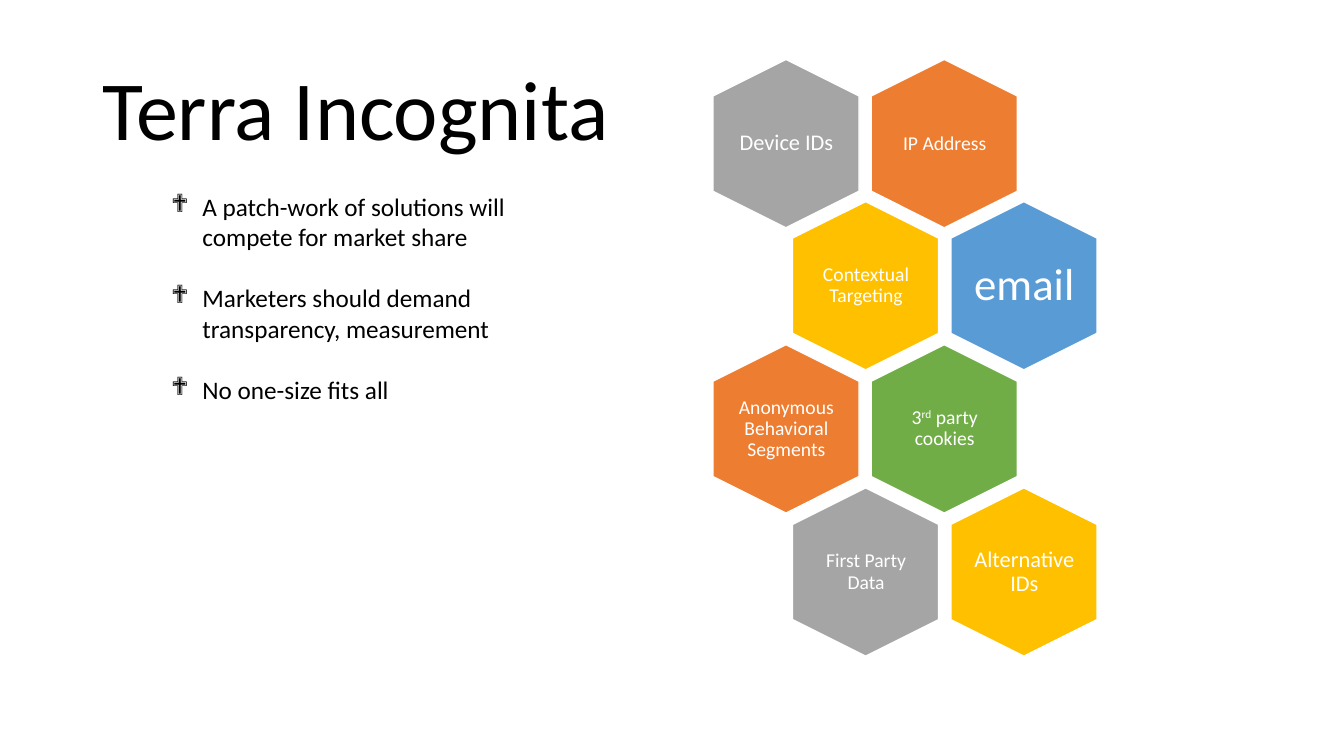
from lxml.etree import SubElement
from pptx import Presentation
from pptx.dml.color import RGBColor
from pptx.enum.shapes import MSO_SHAPE
from pptx.enum.text import MSO_ANCHOR, PP_ALIGN
from pptx.oxml.ns import qn
from pptx.util import Emu, Pt

EMU_PER_PX = 9144  # 100 px to the inch
WHITE, BLACK = "FFFFFF", "000000"
GREY, ORANGE, GOLD, BLUE, GREEN = "A5A5A5", "ED7D31", "FFC000", "599BD5", "70AD47"


def px(length):
    return Emu(length * EMU_PER_PX)


def color(hex_string):
    return RGBColor.from_string(hex_string)


class SlideBuilder:
    def __init__(self, slide, font="Calibri"):
        self.slide = slide
        self.font = font

    def run(self, paragraph, text, size, hex_color, superscript=False):
        run = paragraph.add_run()
        run.text = text
        run.font.name = self.font
        run.font.size = Pt(size)
        run.font.color.rgb = color(hex_color)
        if superscript:
            run.font._element.set("baseline", "30000")

    def text_frame(self, left, top, width, height, inset=(10, 5), anchor=MSO_ANCHOR.MIDDLE):
        box = self.slide.shapes.add_textbox(px(left), px(top), px(width), px(height))
        frame = box.text_frame
        frame.word_wrap = True
        frame.vertical_anchor = anchor
        frame.margin_left = frame.margin_right = px(inset[0])
        frame.margin_top = frame.margin_bottom = px(inset[1])
        return frame

    def title(self, text, left, top, width, height):
        paragraph = self.text_frame(left, top, width, height).paragraphs[0]
        paragraph.line_spacing = 0.9
        self.run(paragraph, text, 60, BLACK)

    def bullets(self, items, left, top, width, height):
        frame = self.text_frame(left, top, width, height, anchor=MSO_ANCHOR.TOP)
        for index, item in enumerate(items):
            paragraph = frame.add_paragraph() if index else frame.paragraphs[0]
            if index:
                paragraph.space_before = Pt(22)
            properties = paragraph._p.get_or_add_pPr()
            properties.set("marL", str(px(31)))
            properties.set("indent", str(-px(31)))
            SubElement(properties, qn("a:buFont"), typeface="Wingdings")
            SubElement(properties, qn("a:buChar"), char="❖")
            self.run(paragraph, item, 18, BLACK)

    def hexagon(self, left, top, fill, size, parts):
        """Draw an upright hexagon; every second part of its label is superscript."""
        shape = self.slide.shapes.add_shape(
            MSO_SHAPE.HEXAGON, px(left), px(top), px(167), px(145))
        shape.rotation = 90
        shape.adjustments[0] = 0.25
        shape.adjustments[1] = 1.1547
        shape.shadow.inherit = False
        shape.fill.solid()
        shape.fill.fore_color.rgb = color(fill)
        shape.line.color.rgb = color(WHITE)
        shape.line.width = Pt(1)

        frame = self.text_frame(left + 34, top + 15, 100, 115, inset=(0, 0))
        paragraph = frame.paragraphs[0]
        paragraph.alignment = PP_ALIGN.CENTER
        paragraph.line_spacing = 0.9
        for index, part in enumerate(parts):
            self.run(paragraph, part, size, WHITE, superscript=index % 2 == 1)


def main():
    presentation = Presentation()
    presentation.slide_width = px(1333)
    presentation.slide_height = px(750)
    slide = presentation.slides.add_slide(presentation.slide_layouts[6])
    builder = SlideBuilder(slide)

    honeycomb = [
        [(GREY, 16, ["Device IDs"]), (ORANGE, 14, ["IP Address"])],
        [(GOLD, 14, ["Contextual Targeting"]), (BLUE, 32, ["email"])],
        [(ORANGE, 14, ["Anonymous Behavioral Segments"]),
         (GREEN, 14, ["3", "rd", " party cookies"])],
        [(GREY, 14, ["First Party Data"]), (GOLD, 16, ["Alternative IDs"])],
    ]
    for row, cells in enumerate(honeycomb):
        for column, (fill, size, parts) in enumerate(cells):
            left = 696 + 157 * column + 79 * (row % 2)
            top = 70 + 425 * row // 3
            builder.hexagon(left, top, fill, size, parts)

    builder.title("Terra Incognita", 92, 40, 1150, 145)
    builder.bullets([
        "A patch-work of solutions will compete for market share",
        "Marketers should demand transparency, measurement",
        "No one-size fits all",
    ], 160, 185, 437, 222)

    presentation.save("out.pptx")


if __name__ == "__main__":
    main()
